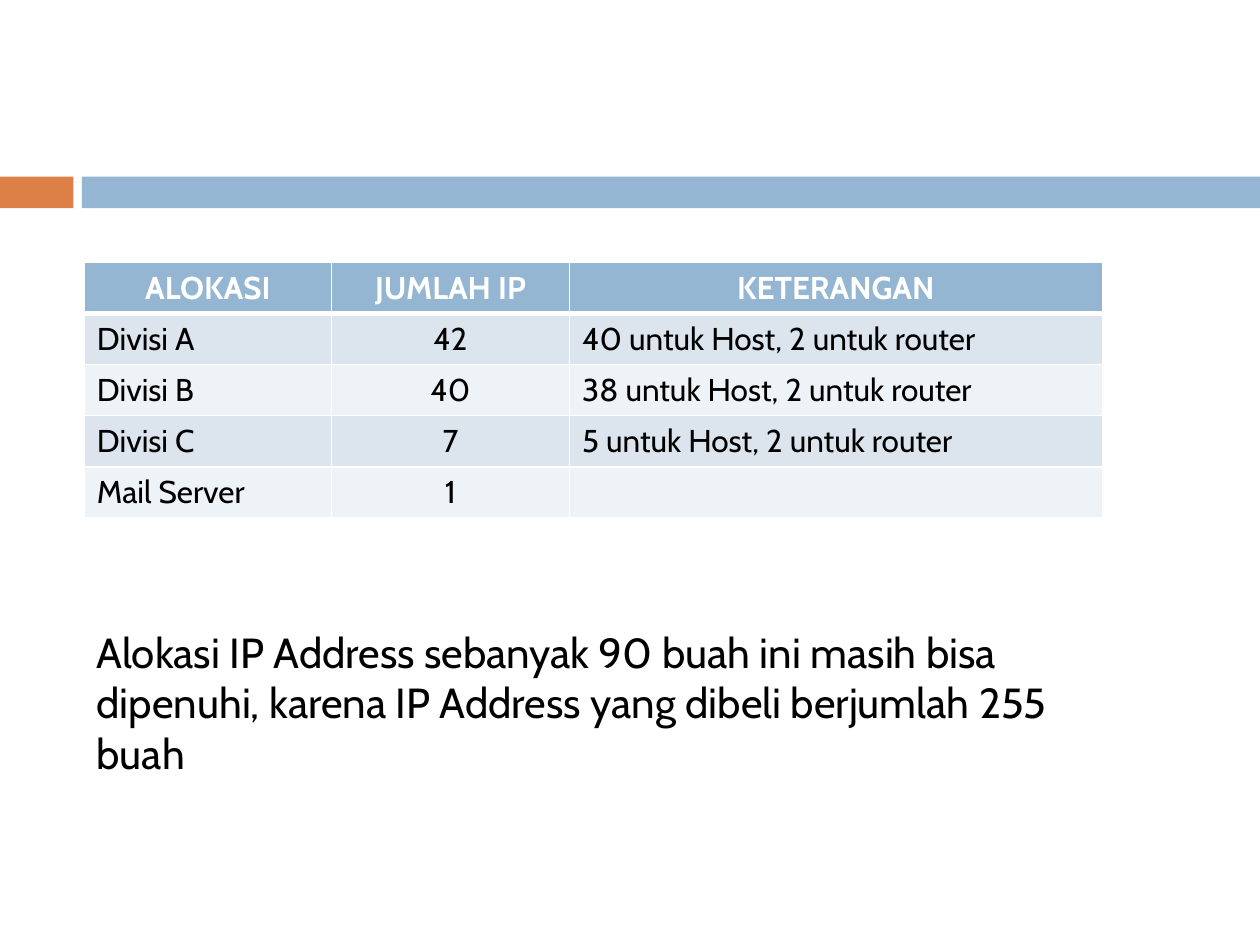
from dataclasses import dataclass

import pptx
import pptx.dml.color
import pptx.enum.shapes
import pptx.enum.text
import pptx.oxml
import pptx.oxml.ns
import pptx.util
from pptx.util import Cm

FONT = "Cabin"
BLUE, ORANGE, WHITE, BLACK = "94B6D2", "DD8047", "FFFFFF", "000000"
BANDS = ("DCE5EE", "EEF3F7")
ALIGN = pptx.enum.text.PP_ALIGN


@dataclass
class Bar:
    left: float
    width: float
    color: str


@dataclass
class Column:
    heading: str
    width: float
    align: ALIGN


BARS = [Bar(0, 1.48, ORANGE), Bar(1.65, 23.75, BLUE)]
COLUMNS = [
    Column("ALOKASI", 4.98, ALIGN.LEFT),
    Column("JUMLAH IP", 4.80, ALIGN.CENTER),
    Column("KETERANGAN", 10.74, ALIGN.LEFT),
]
ALLOCATIONS = [
    ("Divisi A", "42", "40 untuk Host, 2 untuk router"),
    ("Divisi B", "40", "38 untuk Host, 2 untuk router"),
    ("Divisi C", "7", "5 untuk Host, 2 untuk router"),
    ("Mail Server", "1", ""),
]
CONCLUSION = ("Alokasi IP Address sebanyak 90 buah ini masih bisa dipenuhi, "
              "karena IP Address yang dibeli berjumlah 255 buah")
MARGIN, ROW_HEIGHT = 1.70, 1.03


def rgb(color: str) -> pptx.dml.color.RGBColor:
    return pptx.dml.color.RGBColor.from_string(color)


def format_text(paragraph, size: float, color: str, bold: bool = False) -> None:
    for run in paragraph.runs:
        run.font.name = FONT
        run.font.size = pptx.util.Pt(size)
        run.font.bold = bold
        run.font.color.rgb = rgb(color)


def draw_bar(slide, bar: Bar) -> None:
    rectangle = slide.shapes.add_shape(
        pptx.enum.shapes.MSO_SHAPE.RECTANGLE,
        Cm(bar.left), Cm(3.56), Cm(bar.width), Cm(0.64))
    rectangle.shadow.inherit = False
    rectangle.fill.solid()
    rectangle.fill.fore_color.rgb = rgb(bar.color)
    rectangle.line.fill.background()


def add_borders(cell, bottom: float) -> None:
    properties = cell._tc.get_or_add_tcPr()
    widths = {"lnL": 1, "lnR": 1, "lnT": 1, "lnB": bottom}
    # Border lines come before the fill in the cell properties
    for position, (side, width) in enumerate(widths.items()):
        properties.insert(position, pptx.oxml.parse_xml(
            f'<a:{side} {pptx.oxml.ns.nsdecls("a")} w="{pptx.util.Pt(width)}">'
            f'<a:solidFill><a:srgbClr val="{WHITE}"/></a:solidFill></a:{side}>'))


def fill_cell(cell, text: str, align: ALIGN, fill: str, is_header: bool) -> None:
    cell.fill.solid()
    cell.fill.fore_color.rgb = rgb(fill)
    cell.text_frame.text = text
    paragraph = cell.text_frame.paragraphs[0]
    paragraph.alignment = align
    format_text(paragraph, 18, WHITE if is_header else BLACK, is_header)
    add_borders(cell, 3 if is_header else 1)


def draw_allocations(slide) -> None:
    rows = [tuple(column.heading for column in COLUMNS)] + ALLOCATIONS
    table = slide.shapes.add_table(
        len(rows), len(COLUMNS), Cm(MARGIN), Cm(5.29),
        Cm(sum(column.width for column in COLUMNS)),
        Cm(ROW_HEIGHT * len(rows))).table
    for index, column in enumerate(COLUMNS):
        table.columns[index].width = Cm(column.width)
    for row_index, row in enumerate(rows):
        is_header = row_index == 0
        fill = BLUE if is_header else BANDS[(row_index - 1) % 2]
        for column_index, (column, text) in enumerate(zip(COLUMNS, row)):
            align = ALIGN.CENTER if is_header else column.align
            fill_cell(table.cell(row_index, column_index), text, align, fill, is_header)


def draw_conclusion(slide) -> None:
    frame = slide.shapes.add_textbox(
        Cm(MARGIN), Cm(12.50), Cm(21.16), Cm(2.31)).text_frame
    frame.word_wrap = True
    frame.auto_size = pptx.enum.text.MSO_AUTO_SIZE.SHAPE_TO_FIT_TEXT
    frame.text = CONCLUSION
    format_text(frame.paragraphs[0], 24, BLACK)


def main() -> None:
    presentation = pptx.Presentation()
    presentation.slide_width, presentation.slide_height = Cm(25.4), Cm(19.05)
    # Blank layout: this slide has no title
    slide = presentation.slides.add_slide(presentation.slide_layouts[6])
    for bar in BARS:
        draw_bar(slide, bar)
    draw_allocations(slide)
    draw_conclusion(slide)
    presentation.save("out.pptx")


if __name__ == "__main__":
    main()
